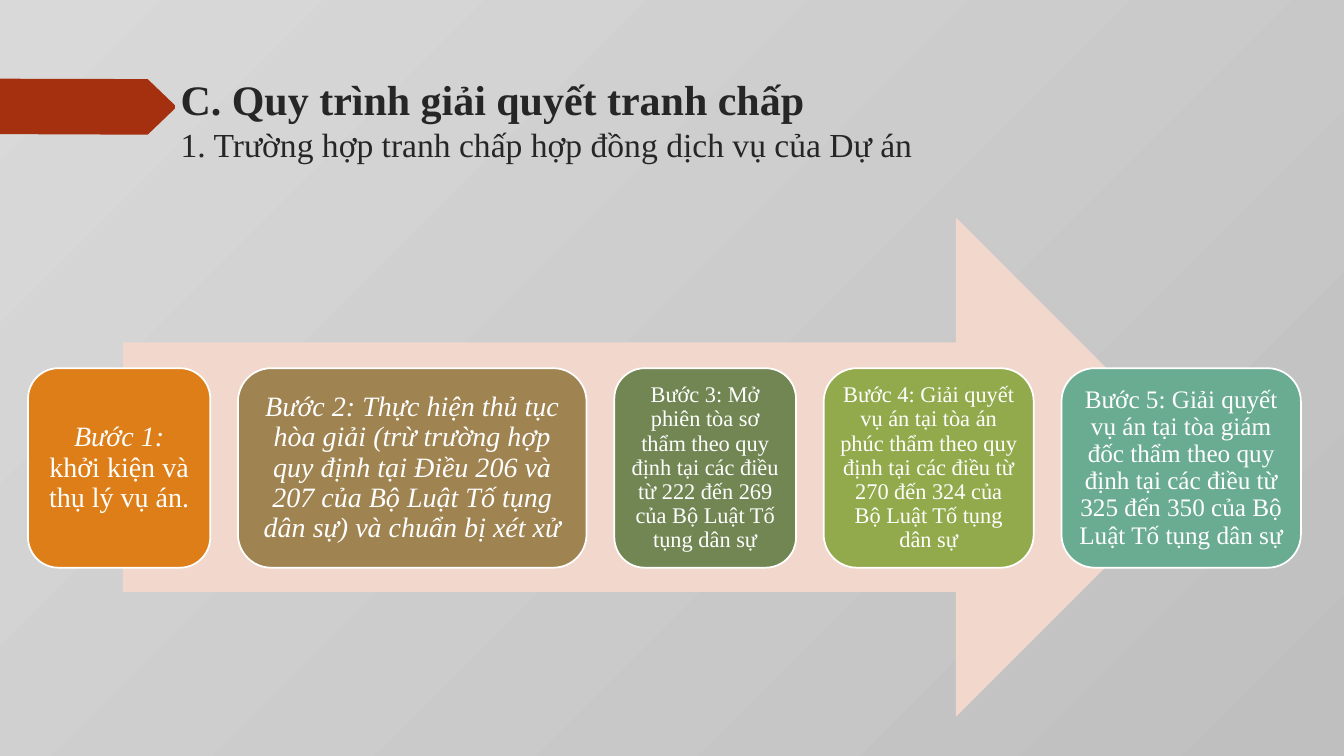
from pptx import Presentation
from pptx.dml.color import RGBColor
from pptx.enum.shapes import MSO_SHAPE as Shape
from pptx.enum.text import MSO_ANCHOR as Anchor, PP_ALIGN as Align
from pptx.util import Pt

FONT = "Times New Roman"
TITLE = "C. Quy trình giải quyết tranh chấp"
SUBTITLE = "1. Trường hợp tranh chấp hợp đồng dịch vụ của Dự án"

# width, fill, text size, inset, runs as (text, italic)
STEPS = [
    (130.2, "DE7E18", 20, 6, [("Bước 1: ", True), ("khởi kiện và thụ lý vụ án.", False)]),
    (249, "9F8351", 20, 6, [("Bước 2: Thực hiện thủ tục hòa giải (trừ trường hợp quy định tại Điều 206 và 207 "
                             "của Bộ Luật Tố tụng dân sự) và chuẩn bị xét xử", True)]),
    (129.8, "728653", 16, 4.8, [("Bước 3: Mở phiên tòa sơ thẩm theo quy định tại các điều từ 222 đến 269 "
                                 "của Bộ Luật Tố tụng dân sự", False)]),
    (150, "92AA4C", 16, 4.8, [("Bước 4: Giải quyết vụ án tại tòa án phúc thẩm theo quy định tại các điều từ 270 "
                               "đến 324 của Bộ Luật Tố tụng dân sự", False)]),
    (171, "6AAC91", 18, 5.4, [("Bước 5: Giải quyết vụ án tại tòa giám đốc thẩm theo quy định tại các điều từ 325 "
                               "đến 350 của Bộ Luật Tố tụng dân sự", False)]),
]
STEP_LEFT, STEP_TOP, STEP_HEIGHT, STEP_GAP = 20, 263, 142.5, 19.8
TAG_POINTS = [(0, 56.2), (105.5, 56.5), (125, 75.2), (125, 77.5), (105.5, 96.2), (0, 95.8)]


def color(value):
    """Turn a hex string into a colour."""
    return RGBColor.from_string(value)


def paint(shape, fill, line=None):
    """Give a shape a flat fill and an optional outline."""
    shape.shadow.inherit = False
    shape.fill.solid()
    shape.fill.fore_color.rgb = color(fill)
    if line:
        shape.line.color.rgb = color(line)
        shape.line.width = Pt(1.25)
    else:
        shape.line.fill.background()


def add_run(paragraph, text, size, ink, bold=False, italic=False):
    """Append one formatted run."""
    run = paragraph.add_run()
    run.text = text
    font = run.font
    font.name, font.size, font.bold, font.italic = FONT, Pt(size), bold, italic
    font.color.rgb = color(ink)


def add_background(slide):
    """Shade the slide diagonally from light to dark grey."""
    fill = slide.background.fill
    fill.gradient()
    fill.gradient_angle = 315
    for stop, shade in zip(fill.gradient_stops, ("D9D9D9", "BFBFBF")):
        stop.color.rgb = color(shade)


def add_title(slide):
    """Draw the red tag and the two title lines."""
    builder = slide.shapes.build_freeform(Pt(TAG_POINTS[0][0]), Pt(TAG_POINTS[0][1]))
    builder.add_line_segments([(Pt(x), Pt(y)) for x, y in TAG_POINTS[1:]])
    paint(builder.convert_to_shape(), "A53010")
    box = slide.shapes.add_textbox(Pt(121.9), Pt(49.2), Pt(690.5), Pt(100.8))
    box.text_frame.word_wrap = True
    paragraph = box.text_frame.paragraphs[0]
    add_run(paragraph, TITLE, 30, "262626", bold=True)
    paragraph.add_line_break()
    add_run(paragraph, SUBTITLE, 24, "262626")


def add_step(slide, left, width, fill, size, inset, runs):
    """Draw one step card with its text."""
    card = slide.shapes.add_shape(Shape.ROUNDED_RECTANGLE, Pt(left), Pt(STEP_TOP), Pt(width), Pt(STEP_HEIGHT))
    paint(card, fill, "FFFFFF")
    frame = card.text_frame
    frame.word_wrap = True
    frame.vertical_anchor = Anchor.MIDDLE
    frame.margin_left = frame.margin_right = frame.margin_top = frame.margin_bottom = Pt(inset)
    paragraph = frame.paragraphs[0]
    paragraph.alignment = Align.CENTER
    paragraph.line_spacing = 0.9
    for text, italic in runs:
        add_run(paragraph, text, size, "FFFFFF", italic=italic)


def main():
    """Build the slide and save it."""
    presentation = Presentation()
    presentation.slide_width, presentation.slide_height = Pt(960), Pt(540)
    slide = presentation.slides.add_slide(presentation.slide_layouts[6])
    add_background(slide)
    add_title(slide)
    arrow = slide.shapes.add_shape(Shape.RIGHT_ARROW, Pt(87.8), Pt(155.5), Pt(773.3), Pt(356.4))
    paint(arrow, "F2D8CC")
    left = STEP_LEFT
    for width, *look in STEPS:
        add_step(slide, left, width, *look)
        left += width + STEP_GAP
    presentation.save("out.pptx")


if __name__ == "__main__":
    main()
